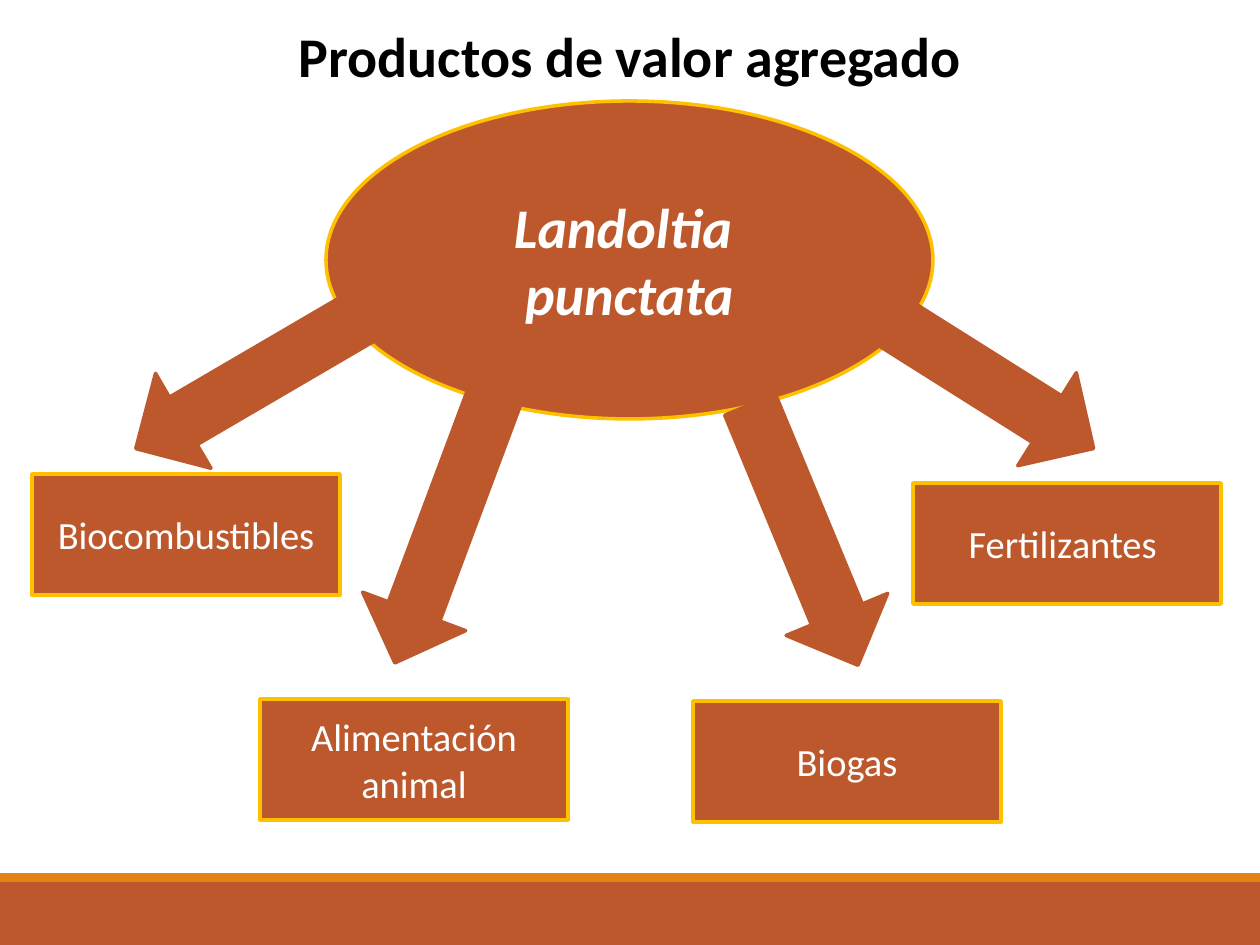
"""Builds the slide on value-added products of Landoltia punctata."""
from pptx import Presentation
from pptx.dml.color import RGBColor
from pptx.enum.shapes import MSO_SHAPE
from pptx.enum.text import MSO_ANCHOR, PP_ALIGN
from pptx.util import Emu, Pt

RECTANGLE, OVAL, ARROW = MSO_SHAPE.RECTANGLE, MSO_SHAPE.OVAL, MSO_SHAPE.RIGHT_ARROW
MIDDLE, CENTER = MSO_ANCHOR.MIDDLE, PP_ALIGN.CENTER

PX_PER_INCH = 126
WIDTH, HEIGHT = 1260, 945
RUST, ORANGE, GOLD = "BD582C", "E48312", "FFC000"
WHITE, BLACK = "FFFFFF", "000000"

TITLE = "Productos de valor agregado"
TITLE_AREA = (231, 15, 798, 81)
SPECIES = ["Landoltia ", "punctata"]
SPECIES_AREA = (326, 101, 607, 318)
BANDS = [((0, 882, WIDTH, 63), RUST), ((0, 873, WIDTH, 9), ORANGE)]

ARROW_HEIGHT = 110
ARROWS = [  # left, top, length, rotation
    (825, 316, 291, 32.2),
    (663, 480, 282, 67.5),
    (118, 328, 260, 149.7),
    (297, 467, 301, 110.5),
]
PRODUCT_SIZE = (308, 121)
PRODUCTS = [
    ("Biocombustibles", 32, 474),
    ("Fertilizantes ", 913, 483),
    ("Biogas", 693, 701),
    ("Alimentación animal", 260, 699),
]


def px(length):
    return Emu(round(length * 914400 / PX_PER_INCH))


def color(code):
    return RGBColor.from_string(code)


def add_shape(page, kind, area, fill, line=None):
    shape = page.shapes.add_shape(kind, *map(px, area))
    shape.shadow.inherit = False
    shape.fill.solid()
    shape.fill.fore_color.rgb = color(fill)
    if line:
        shape.line.color.rgb = color(line)
        shape.line.width = Pt(2)
    else:
        shape.line.fill.background()
    return shape


def write(shape, lines, size, ink, bold=False, italic=False):
    frame = shape.text_frame
    frame.word_wrap = True
    frame.text = "\n".join(lines)
    for paragraph in frame.paragraphs:
        paragraph.alignment = CENTER
        font = paragraph.font
        font.name, font.size = "Calibri", Pt(size)
        font.bold, font.italic = bold, italic
        font.color.rgb = color(ink)
    return frame


def main():
    deck = Presentation()
    deck.slide_width, deck.slide_height = px(WIDTH), px(HEIGHT)
    page = deck.slides.add_slide(deck.slide_layouts[6])

    for area, fill in BANDS:
        add_shape(page, RECTANGLE, area, fill)

    oval = add_shape(page, OVAL, SPECIES_AREA, RUST, GOLD)
    write(oval, SPECIES, 32, WHITE, bold=True, italic=True).vertical_anchor = MIDDLE

    for left, top, length, rotation in ARROWS:
        arrow = add_shape(page, ARROW, (left, top, length, ARROW_HEIGHT), RUST, RUST)
        arrow.rotation = rotation

    for name, left, top in PRODUCTS:
        box = add_shape(page, RECTANGLE, (left, top, *PRODUCT_SIZE), RUST, GOLD)
        write(box, [name], 22, WHITE).vertical_anchor = MIDDLE

    title = page.shapes.add_textbox(*map(px, TITLE_AREA))
    write(title, [TITLE], 32, BLACK, bold=True)

    deck.save("out.pptx")


if __name__ == "__main__":
    main()
